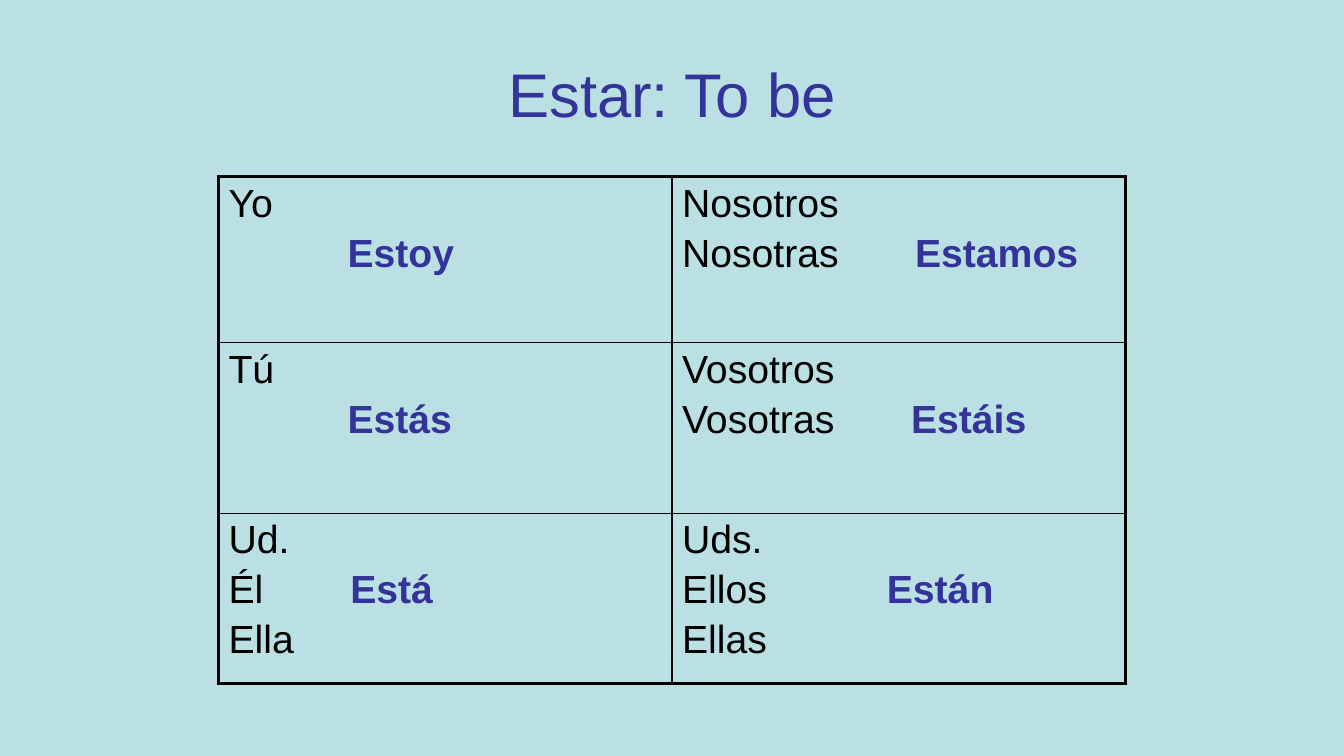
"""Build a slide with the present-tense conjugation table of estar."""
from lxml.etree import SubElement
from pptx import Presentation
from pptx.dml.color import RGBColor
from pptx.enum.text import MSO_ANCHOR, PP_ALIGN
from pptx.oxml.ns import qn
from pptx.util import Cm, Pt

TITLE = "Estar: To be"
# Each cell: pronouns, verb form, tab stop in cm; the verb is on the second line.
CELLS = [
    [(["Yo", ""], "Estoy", 3.0), (["Nosotros", "Nosotras"], "Estamos", 5.87)],
    [(["Tú", ""], "Estás", 3.0), (["Vosotros", "Vosotras"], "Estáis", 5.77)],
    [(["Ud.", "Él", "Ella"], "Está", 3.07),
     (["Uds.", "Ellos", "Ellas"], "Están", 5.16)],
]
COLORS = {"back": "BBE0E3", "accent": "333399", "text": "000000"}
FONT = "Arial"
VERB_LINE = 1
SLIDE_W, SLIDE_H = 33.87, 19.05
COL_W = 11.43
ROW_HEIGHTS = [4.19, 4.29, 4.29]
TABLE_TOP = 4.45
OUTER, INNER = 2.25, 1


def rgb(name):
    return RGBColor.from_string(COLORS[name])


def add_run(p, text, size, color, bold=False):
    r = p.add_run()
    r.text = text
    r.font.name, r.font.size, r.font.bold = FONT, Pt(size), bold
    r.font.color.rgb = rgb(color)


def add_tab_stop(p, pos):
    tabs = SubElement(p._p.get_or_add_pPr(), qn("a:tabLst"))
    SubElement(tabs, qn("a:tab"), pos=str(Cm(pos)), algn="l")


def set_borders(cell, widths):
    tc_pr = cell._tc.get_or_add_tcPr()
    for side, width in zip("LRTB", widths):
        ln = SubElement(tc_pr, qn(f"a:ln{side}"), w=str(Pt(width)))
        fill = SubElement(ln, qn("a:solidFill"))
        SubElement(fill, qn("a:srgbClr"), val=COLORS["text"])


def fill_cell(cell, pronouns, verb, stop):
    tf = cell.text_frame
    for i, pronoun in enumerate(pronouns):
        p = tf.add_paragraph() if i else tf.paragraphs[0]
        if i:
            p.space_before = Pt(4.6)
        if i == VERB_LINE:
            add_tab_stop(p, stop)
            add_run(p, pronoun + "\t", 28, "text")
            add_run(p, verb, 28, "accent", True)
        else:
            add_run(p, pronoun, 28, "text")


def add_title(slide):
    sp = slide.shapes.title
    sp.left, sp.top, sp.width, sp.height = Cm(1.7), Cm(0.76), Cm(30.48), Cm(3.18)
    tf = sp.text_frame
    tf.vertical_anchor = MSO_ANCHOR.MIDDLE
    p = tf.paragraphs[0]
    p.alignment = PP_ALIGN.CENTER
    add_run(p, TITLE, 44, "accent")


def add_conjugation(slide):
    n_rows, n_cols = len(CELLS), len(CELLS[0])
    width = n_cols * COL_W
    table = slide.shapes.add_table(
        n_rows, n_cols, Cm((SLIDE_W - width) / 2), Cm(TABLE_TOP),
        Cm(width), Cm(sum(ROW_HEIGHTS))).table
    table.first_row = table.horz_banding = False
    for col in table.columns:
        col.width = Cm(COL_W)
    for i, row in enumerate(CELLS):
        table.rows[i].height = Cm(ROW_HEIGHTS[i])
        for j, content in enumerate(row):
            cell = table.cell(i, j)
            on_edge = (j == 0, j == n_cols - 1, i == 0, i == n_rows - 1)
            set_borders(cell, [OUTER if edge else INNER for edge in on_edge])
            cell.fill.background()
            fill_cell(cell, *content)


def main():
    prs = Presentation()
    prs.slide_width, prs.slide_height = Cm(SLIDE_W), Cm(SLIDE_H)
    slide = prs.slides.add_slide(prs.slide_layouts[5])
    slide.background.fill.solid()
    slide.background.fill.fore_color.rgb = rgb("back")
    add_title(slide)
    add_conjugation(slide)
    prs.save("out.pptx")


if __name__ == "__main__":
    main()
